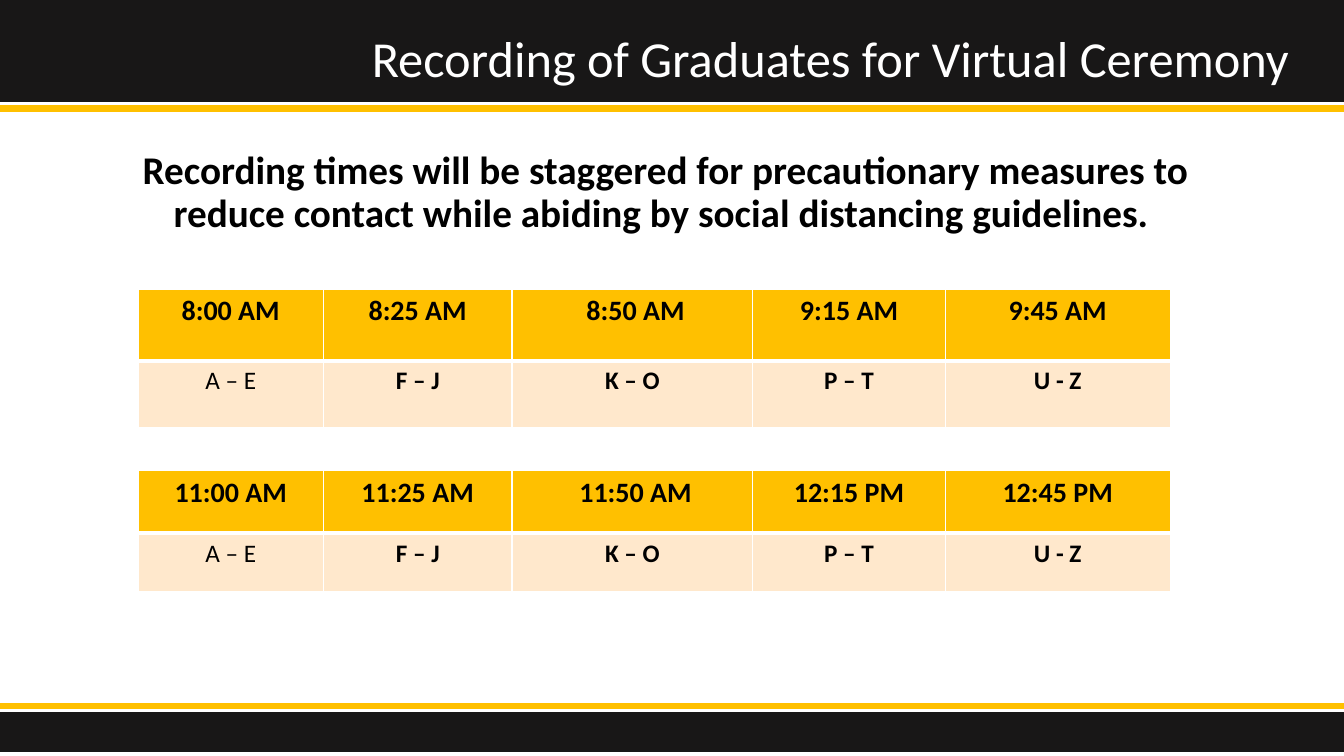
from lxml import etree
from pptx import Presentation
from pptx.dml.color import RGBColor
from pptx.enum import shapes, text
from pptx.oxml.ns import qn
from pptx.util import Pt

BLACK = RGBColor(0x00, 0x00, 0x00)
WHITE = RGBColor(0xFF, 0xFF, 0xFF)
DARK = RGBColor(0x18, 0x17, 0x17)
GOLD = RGBColor(0xFF, 0xC0, 0x00)
CREAM = RGBColor(0xFF, 0xE8, 0xCC)

WIDE, HIGH = 960, 540
COLS = [132.5, 134.6, 172.1, 137.5, 160.6]
NAMES = ["A – E", "F – J", "K – O", "P – T", "U - Z"]
EARLY = ["8:00 AM", "8:25 AM", " 8:50 AM", "9:15 AM", "9:45 AM"]
LATE = ["11:00 AM", "11:25 AM", " 11:50 AM", "12:15 PM", "12:45 PM"]


def write(frame, words, align, color, **form):
    """Put one formatted paragraph in a text frame."""
    para = frame.paragraphs[0]
    para.alignment = align
    run = para.add_run()
    run.text = words
    for key, value in {"name": "Calibri", **form}.items():
        setattr(run.font, key, value)
    run.font.color.rgb = color
    return para


def add_bar(slide, top, height, color):
    """Draw a band across the whole slide."""
    bar = slide.shapes.add_shape(
        shapes.MSO_SHAPE.RECTANGLE, 0, Pt(top), Pt(WIDE), Pt(height))
    bar.shadow.inherit = False
    bar.fill.solid()
    bar.fill.fore_color.rgb = color
    bar.line.color.rgb = color
    bar.line.width = Pt(1)


def add_text(slide, box, words, align, anchor, color, **form):
    """Add a wrapped text box with tight lines."""
    frame = slide.shapes.add_textbox(*map(Pt, box)).text_frame
    frame.word_wrap = True
    frame.vertical_anchor = anchor
    write(frame, words, align, color, **form).line_spacing = 0.9


def add_edges(cell, **widths):
    """Draw white cell borders, widths in points by side."""
    props = cell._tc.get_or_add_tcPr()
    for side, width in widths.items():
        edge = etree.SubElement(props, qn("a:ln" + side), w=str(Pt(width)))
        fill = etree.SubElement(edge, qn("a:solidFill"))
        etree.SubElement(fill, qn("a:srgbClr"), val=str(WHITE))


def add_times(slide, top, times, heights):
    """Add a table of start times above the name groups."""
    grid = slide.shapes.add_table(
        2, len(COLS), Pt(98.6), Pt(top), Pt(sum(COLS)), Pt(sum(heights))).table
    for col, width in zip(grid.columns, COLS):
        col.width = Pt(width)
    looks = [(times, GOLD, 20, 1, 3), (NAMES, CREAM, 18, 3, 1)]
    for r, (words, color, size, above, below) in enumerate(looks):
        grid.rows[r].height = Pt(heights[r])
        for c, word in enumerate(words):
            cell = grid.cell(r, c)
            add_edges(cell, L=1, R=1, T=above, B=below)
            cell.fill.solid()
            cell.fill.fore_color.rgb = color
            write(cell.text_frame, word, text.PP_ALIGN.CENTER, BLACK,
                  size=Pt(size), bold=r == 0 or c > 0)


def main():
    deck = Presentation()
    deck.slide_width, deck.slide_height = Pt(WIDE), Pt(HIGH)
    slide = deck.slides.add_slide(deck.slide_layouts[6])

    # Top and bottom bands
    add_bar(slide, 0, 72.7, DARK)
    add_bar(slide, 75.6, 3.6, GOLD)
    add_bar(slide, 509, 27.4, DARK)
    add_bar(slide, 502.6, 3.6, GOLD)

    # Title and message
    add_text(slide, (258.5, 8.6, 674.6, 69.8),
             "Recording of Graduates for Virtual Ceremony",
             text.PP_ALIGN.LEFT, text.MSO_ANCHOR.MIDDLE, WHITE, size=Pt(36))
    add_text(slide, (61.2, 104.4, 828, 355),
             "Recording times will be staggered for precautionary measures to "
             "reduce contact while abiding by social distancing guidelines. ",
             text.PP_ALIGN.CENTER, text.MSO_ANCHOR.TOP, BLACK,
             size=Pt(28), bold=True)

    # Morning and midday sessions
    add_times(slide, 206.6, EARLY, [51.1, 47.5])
    add_times(slide, 336.2, LATE, [44.6, 41.8])

    deck.save("out.pptx")


if __name__ == "__main__":
    main()
